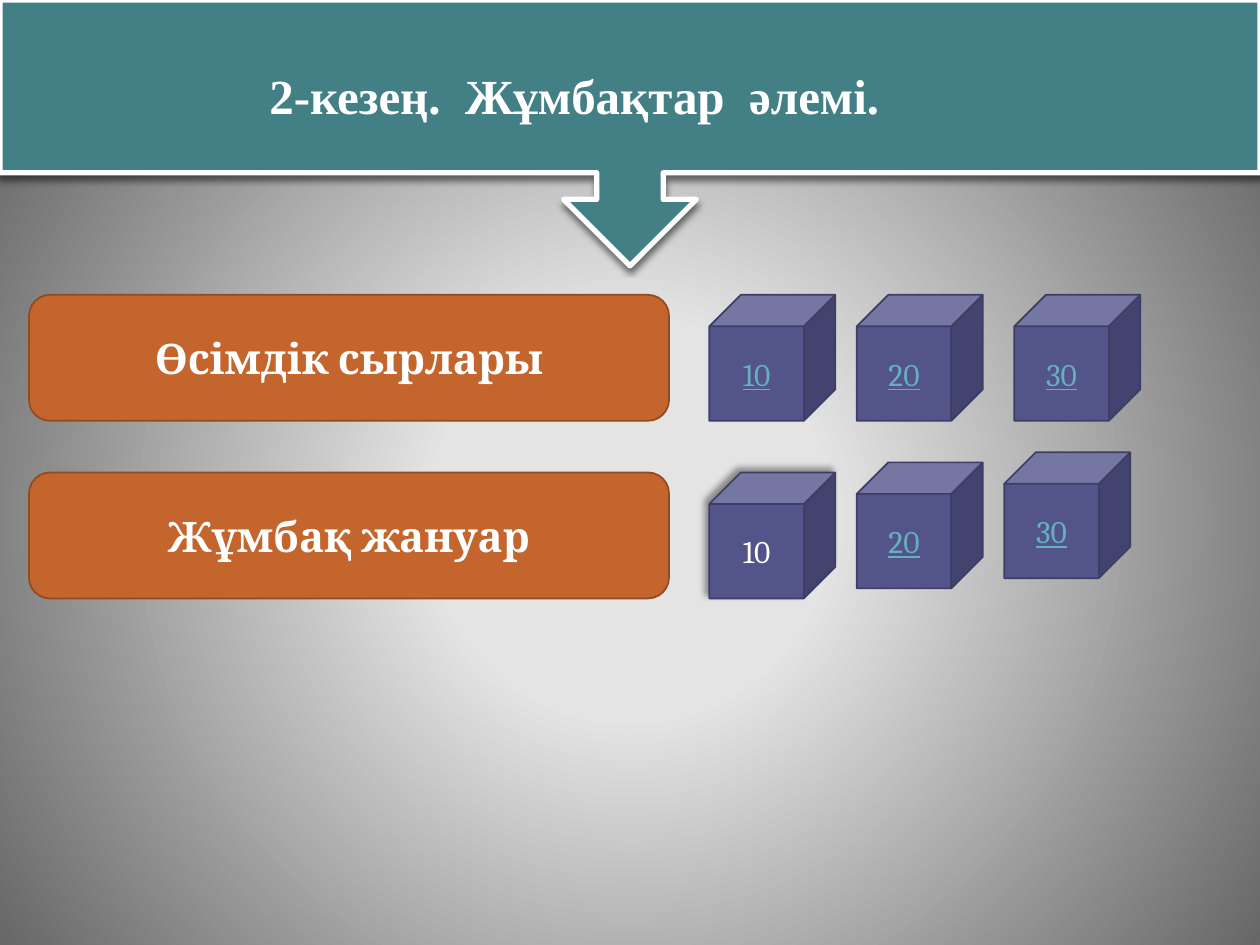
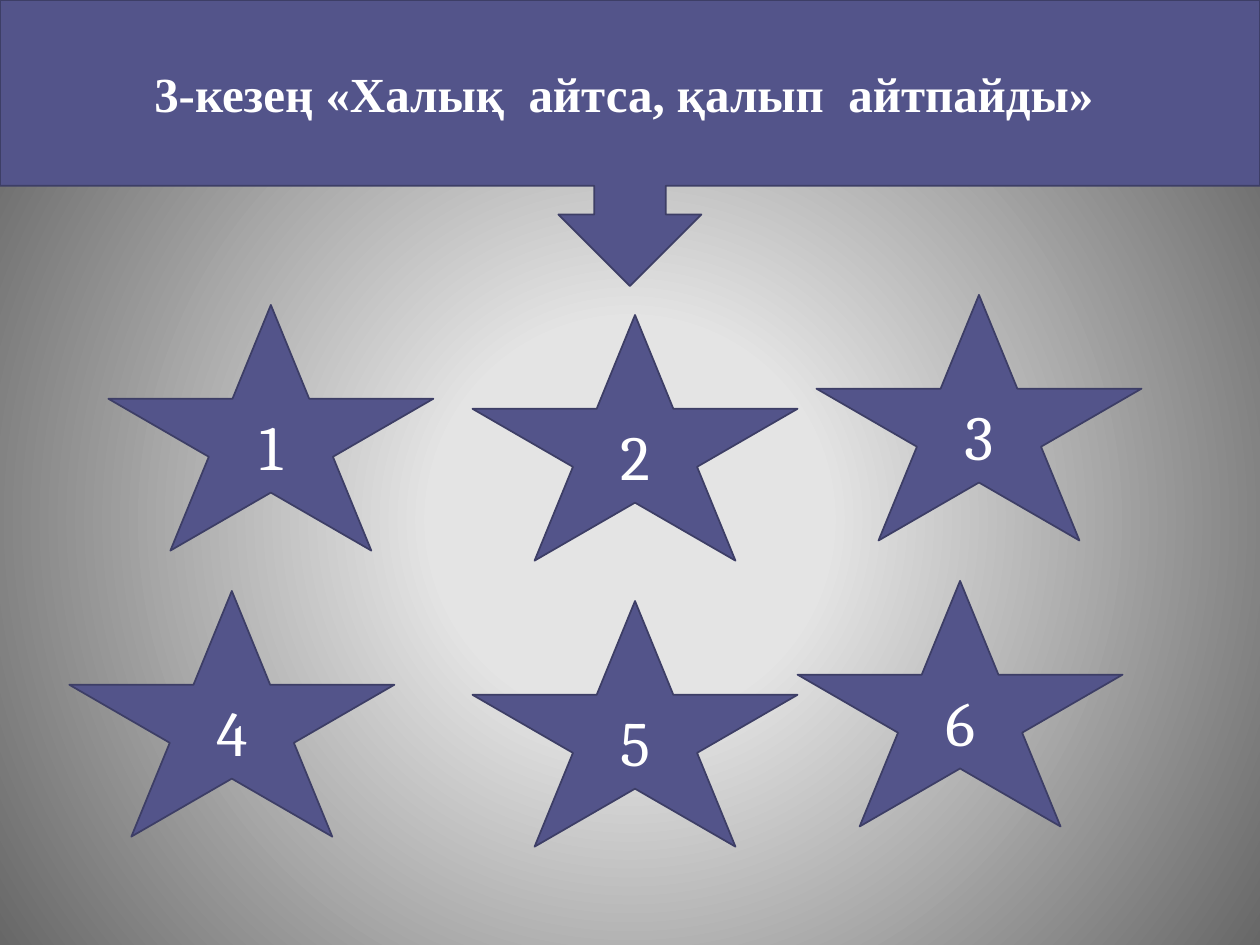
"""Builds two quiz slides: a riddle board and a board of numbered stars."""
from dataclasses import dataclass

from lxml.etree import SubElement
from pptx import Presentation
from pptx.dml.color import RGBColor
from pptx.enum.shapes import MSO_SHAPE
from pptx.enum.text import MSO_ANCHOR, PP_ALIGN
from pptx.oxml import parse_xml
from pptx.oxml.ns import nsdecls, qn
from pptx.util import Inches, Pt

WIDE, HIGH = 10, 7.5

RIDDLES = {
    "title": "2-кезең.  Жұмбақтар  әлемі.",
    "rows": [
        {"name": "Өсімдік сырлары", "top": 2.34, "lift": 0,
         "cols": (5.63, 6.8, 8.05), "open": ()},
        {"name": "Жұмбақ жануар", "top": 3.75, "lift": 0.08,
         "cols": (5.63, 6.8, 7.97), "open": ("10",)},
    ],
    "points": ("10", "20", "30"),
}
SAYINGS = {
    "title": "3-кезең «Халық  айтса, қалып  айтпайды» ",
    "rows": [(2.34, (0.86, 3.75, 6.48)), (4.61, (0.55, 3.75, 6.33))],
    "drops": (0.08, 0.16, 0),
}


@dataclass(frozen=True)
class Theme:
    """Colours, fonts and type sizes."""
    violet: tuple = ("53548A", "3D3E66", 1)
    orange: tuple = ("C4652D", "914B21", 1)
    teal: tuple = ("438086", "FFFFFF", 3)
    white: str = "FFFFFF"
    link: str = "67AFBD"
    glow: tuple = ((0, "E5E5E5"), (25, "E4E4E4"), (100, "616161"))
    body: str = "Cambria"
    head: str = "Times New Roman"
    title: int = 28
    label: int = 24
    point: int = 18
    digit: int = 36


T = Theme()


def rgb(code):
    """Turns a hex code into a colour."""
    return RGBColor.from_string(code)


def backdrop(master):
    """Gives the master a round grey gradient."""
    master.background.fill.solid()
    old = master._element.find(".//" + qn("p:bg")).find(".//" + qn("a:solidFill"))
    stops = "".join(
        f'<a:gs pos="{at * 1000}"><a:srgbClr val="{code}"/></a:gs>' for at, code in T.glow)
    new = parse_xml(
        f'<a:gradFill {nsdecls("a")} rotWithShape="1"><a:gsLst>{stops}</a:gsLst>'
        '<a:path path="circle"><a:fillToRect l="10000" t="110000" r="10000" b="100000"/>'
        '</a:path></a:gradFill>')
    old.getparent().replace(old, new)


def write(shape, text, size, font=T.body, color=T.white, bold=False, line=False,
          align=PP_ALIGN.CENTER):
    """Puts one styled run into a shape."""
    frame = shape.text_frame
    frame.word_wrap = True
    frame.vertical_anchor = MSO_ANCHOR.MIDDLE
    para = frame.paragraphs[0]
    para.alignment = align
    run = para.add_run()
    run.text = text
    style = run.font
    style.name, style.size, style.bold = font, Pt(size), bold
    style.underline = line
    style.color.rgb = rgb(color)


def draw(slide, kind, box, look):
    """Adds a filled and outlined preset shape."""
    shape = slide.shapes.add_shape(kind, *map(Inches, box))
    fill, edge, width = look
    shape.shadow.inherit = False
    shape.fill.solid()
    shape.fill.fore_color.rgb = rgb(fill)
    shape.line.color.rgb = rgb(edge)
    shape.line.width = Pt(width)
    return shape


def shade(shape, alpha, blur, dist, angle):
    """Adds a soft black outer shadow."""
    host = shape._element.spPr.find(qn("a:effectLst"))
    cast = SubElement(host, qn("a:outerShdw"), blurRad=str(Pt(blur)), dist=str(Pt(dist)),
                      dir=str(angle * 60000), algn="ctr", rotWithShape="0")
    tint = SubElement(cast, qn("a:srgbClr"), val="000000")
    SubElement(tint, qn("a:alpha"), val=str(alpha * 1000))


def banner(slide, high, look):
    """Adds the full-width arrow callout."""
    return draw(slide, MSO_SHAPE.DOWN_ARROW_CALLOUT, (0, 0, WIDE, high), look)


def riddles(slide, data):
    """Lays out the named rows and their point cubes."""
    for row in data["rows"]:
        bar = draw(slide, MSO_SHAPE.ROUNDED_RECTANGLE, (0.23, row["top"], 5.08, 1), T.orange)
        write(bar, row["name"], T.label, bold=True)
        for i, (left, point) in enumerate(zip(row["cols"], data["points"])):
            top = row["top"] - i * row["lift"]
            cube = draw(slide, MSO_SHAPE.CUBE, (left, top, 1, 1), T.violet)
            used = point in row["open"]
            write(cube, point, T.point, color=T.white if used else T.link, line=not used)
            if used:
                shade(cube, 40, 4, 3, 225)
    shade(banner(slide, 2.11, T.teal), 50, 3, 2, 90)
    title = slide.shapes.add_textbox(*map(Inches, (2.04, 0.5, 5.2, 0.5)))
    write(title, data["title"], T.title, T.head, bold=True, align=PP_ALIGN.LEFT)


def sayings(slide, data):
    """Lays out the numbered stars."""
    write(banner(slide, 2.27, T.violet), data["title"], T.title, T.head, bold=True)
    count = 0
    for top, cols in data["rows"]:
        for left, drop in zip(cols, data["drops"]):
            count += 1
            star = draw(slide, MSO_SHAPE.STAR_5_POINT, (left, top + drop, 2.58, 1.95), T.violet)
            write(star, str(count), T.digit)


def main():
    """Builds and saves the deck."""
    deck = Presentation()
    deck.slide_width, deck.slide_height = Inches(WIDE), Inches(HIGH)
    backdrop(deck.slide_master)
    for build, data in ((riddles, RIDDLES), (sayings, SAYINGS)):
        build(deck.slides.add_slide(deck.slide_layouts[6]), data)
    deck.save("out.pptx")


if __name__ == "__main__":
    main()
